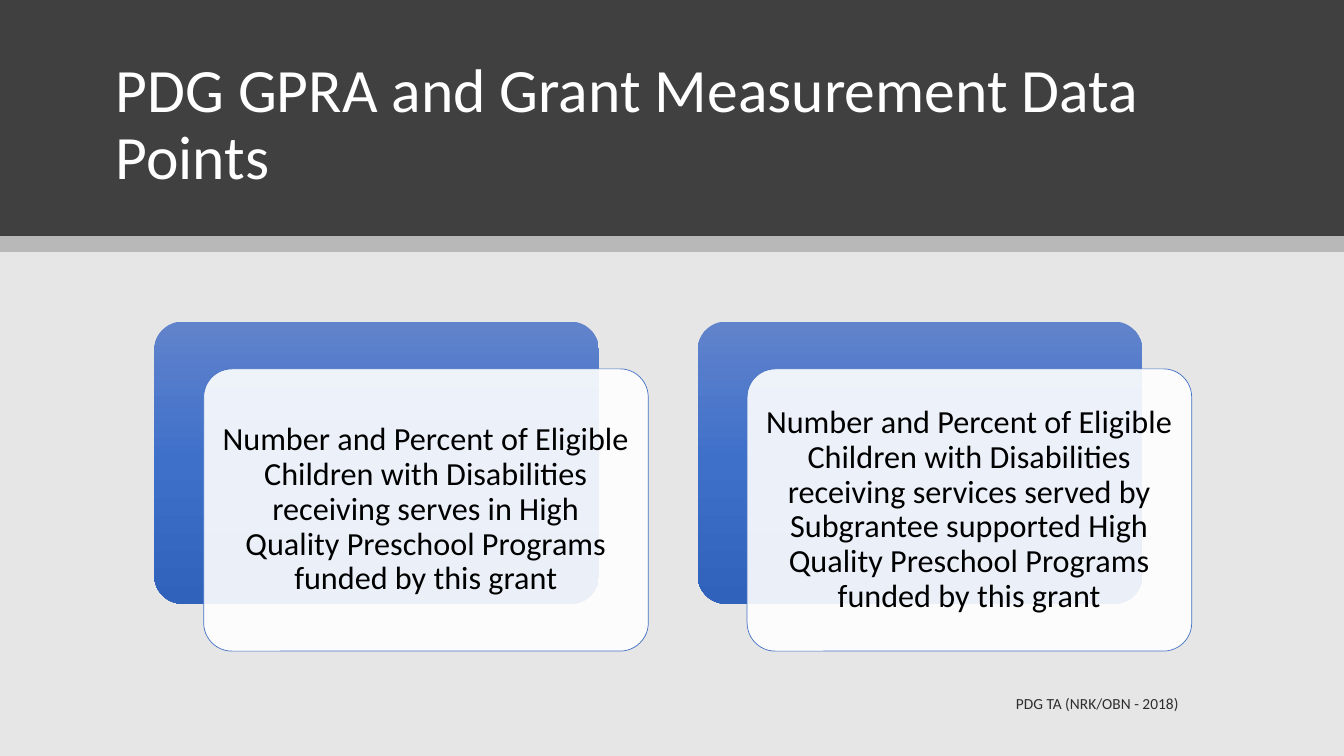
from lxml.etree import SubElement
from pptx import Presentation
from pptx.dml.color import RGBColor
from pptx.enum.shapes import MSO_SHAPE
from pptx.enum.text import MSO_ANCHOR, PP_ALIGN
from pptx.oxml.ns import qn
from pptx.util import Inches, Pt

FONT = "Calibri"
COLORS = {
    "background": "E7E6E6",
    "header": "404040",
    "black": "000000",
    "white": "FFFFFF",
    "card_line": "4472C4",
}
GRADIENT = ((0, "6183CB"), (50, "3E70CA"), (100, "3062BB"))
SLIDE_WIDTH, SLIDE_HEIGHT = 13.33, 7.5
MEASURES = (
    "Number and Percent of Eligible Children with Disabilities receiving serves "
    "in High Quality Preschool Programs funded by this grant",
    "Number and Percent of Eligible Children with Disabilities receiving services "
    "served by Subgrantee supported High Quality Preschool Programs funded by this grant",
)


def set_color(fill, color, opacity=100):
    """Make a fill solid, with an opacity in percent."""
    fill.solid()
    fill.fore_color.rgb = RGBColor.from_string(COLORS[color])
    if opacity < 100:
        color_element = next(fill._xPr.iter(qn("a:srgbClr")))
        SubElement(color_element, qn("a:alpha"), val=str(opacity * 1000))


def set_vertical_gradient(shape):
    shape.fill.gradient()
    shape.fill.gradient_angle = 270
    stop_list = next(shape._element.spPr.iter(qn("a:gsLst")))
    for stop in list(stop_list):
        stop_list.remove(stop)
    for position, color in GRADIENT:
        stop = SubElement(stop_list, qn("a:gs"), pos=str(position * 1000))
        SubElement(stop, qn("a:srgbClr"), val=color)


def add_panel(slide, kind, left, top, width, height):
    shape = slide.shapes.add_shape(
        kind, Inches(left), Inches(top), Inches(width), Inches(height))
    shape.shadow.inherit = False
    shape.line.fill.background()
    return shape


def add_band(slide, top, height, color, opacity=100):
    band = add_panel(slide, MSO_SHAPE.RECTANGLE, 0, top, SLIDE_WIDTH, height)
    set_color(band.fill, color, opacity)


def write_text(shape, text, size, color, alignment, anchor, opacity=100):
    frame = shape.text_frame
    frame.word_wrap = True
    frame.vertical_anchor = anchor
    paragraph = frame.paragraphs[0]
    paragraph.alignment = alignment
    run = paragraph.add_run()
    run.text = text
    run.font.name = FONT
    run.font.size = Pt(size)
    set_color(run.font.fill, color, opacity)
    return paragraph


def add_text_box(slide, left, top, width, height, *text_style):
    box = slide.shapes.add_textbox(
        Inches(left), Inches(top), Inches(width), Inches(height))
    return write_text(box, *text_style)


def add_header(slide, height):
    add_band(slide, 0, height, "header")
    add_band(slide, height, 0.16, "black", 20)
    title = add_text_box(
        slide, 1.05, 0.47, 11.24, 1.49, "PDG GPRA and Grant Measurement Data Points",
        44, "white", PP_ALIGN.LEFT, MSO_ANCHOR.BOTTOM)
    title.line_spacing = 0.9


def add_measure_card(slide, left, top, width, height, text):
    """Place a gradient panel with a white text card shifted down and right."""
    back = add_panel(slide, MSO_SHAPE.ROUNDED_RECTANGLE, left, top, width, height)
    set_vertical_gradient(back)
    card = add_panel(slide, MSO_SHAPE.ROUNDED_RECTANGLE,
                     left + 0.49, top + 0.47, width, height)
    set_color(card.fill, "white", 90)
    set_color(card.line.fill, "card_line")
    card.line.width = Pt(0.5)
    for shape in (back, card):
        shape.adjustments[0] = 0.1
    frame = card.text_frame
    frame.margin_left = frame.margin_right = Inches(0.1)
    frame.margin_top = frame.margin_bottom = Inches(0.1)
    paragraph = write_text(card, text, 23, "black", PP_ALIGN.CENTER, MSO_ANCHOR.MIDDLE)
    paragraph.line_spacing = 0.9


def add_footer(slide):
    footer = add_text_box(
        slide, 5.33, 6.78, 6.46, 0.4, "PDG TA (NRK/OBN - 2018)",
        11, "black", PP_ALIGN.RIGHT, MSO_ANCHOR.MIDDLE, 80)
    footer.space_after = Pt(6)


def main():
    presentation = Presentation()
    presentation.slide_width = Inches(SLIDE_WIDTH)
    presentation.slide_height = Inches(SLIDE_HEIGHT)
    slide = presentation.slides.add_slide(presentation.slide_layouts[6])
    set_color(slide.background.fill, "background")
    add_header(slide, 2.34)
    for index, measure in enumerate(MEASURES):
        add_measure_card(slide, 1.53 + index * 5.39, 3.19, 4.41, 2.8, measure)
    add_footer(slide)
    presentation.save("out.pptx")


if __name__ == "__main__":
    main()
